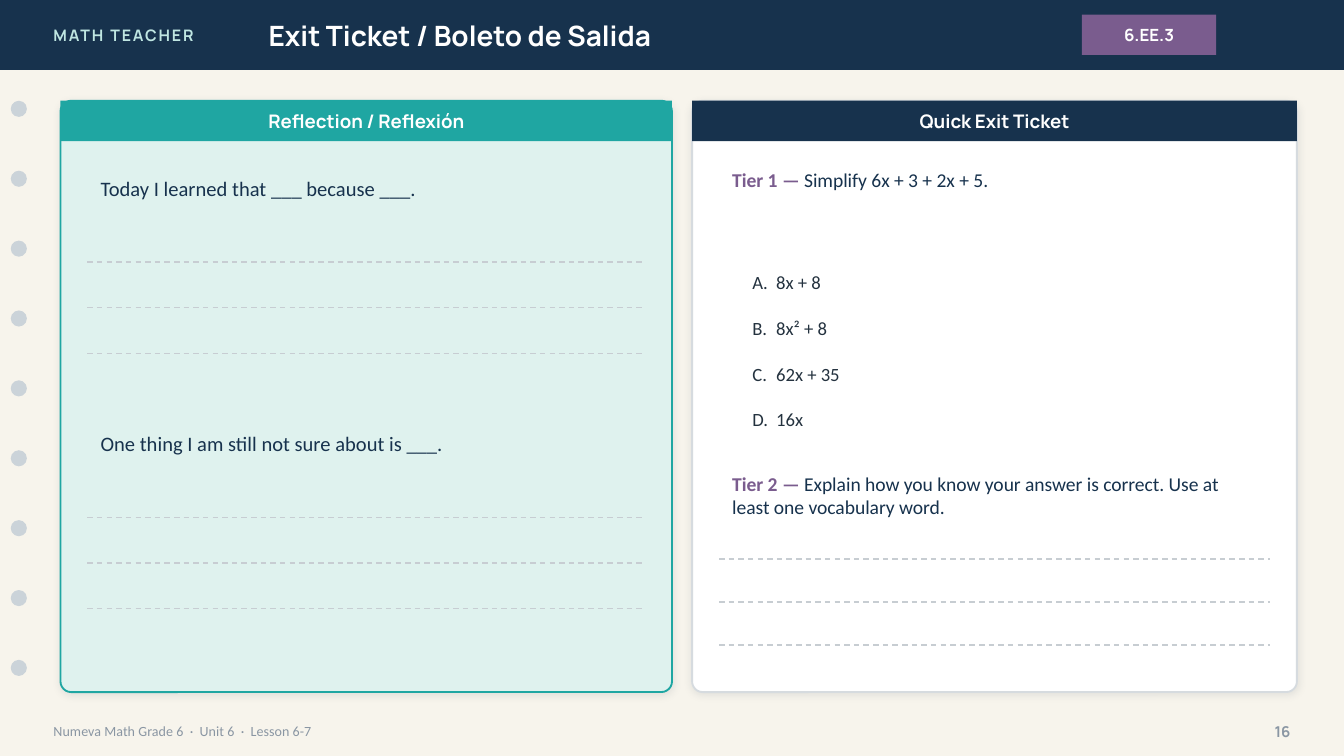
from lxml import etree
from pptx import Presentation
from pptx.dml.color import RGBColor
from pptx.enum.dml import MSO_LINE
from pptx.enum.shapes import MSO_CONNECTOR, MSO_SHAPE
from pptx.enum.text import MSO_ANCHOR, PP_ALIGN
from pptx.oxml import parse_xml
from pptx.oxml.ns import nsdecls, qn
from pptx.util import Pt

COLORS = {
    "paper": "F7F4EC", "navy": "17324D", "mint": "BFE6E2", "white": "FFFFFF",
    "purple": "7A5C8E", "hole": "CBD3D9", "muted": "8A96A3", "teal": "1FA6A2",
    "pale": "DFF2EE", "border": "D6DBDF", "rule": "C7CDD2", "ink": "24323F",
    "shadow": "1C2E42",
}
C = {name: RGBColor.from_string(value) for name, value in COLORS.items()}

prs = Presentation()
prs.slide_width, prs.slide_height = Pt(720), Pt(405)
slide = prs.slides.add_slide(prs.slide_layouts[6])
slide.background.fill.solid()
slide.background.fill.fore_color.rgb = C["paper"]
shapes = slide.shapes


def add_box(kind, x, y, w, h, fill, line=None):
    sp = shapes.add_shape(kind, Pt(x), Pt(y), Pt(w), Pt(h))
    sp.shadow.inherit = False
    sp.fill.solid()
    sp.fill.fore_color.rgb = C[fill]
    if line:
        sp.line.color.rgb = C[line]
        sp.line.width = Pt(1)
    else:
        sp.line.fill.background()
    return sp


def write(sp, text, size, color, font="Calibri", bold=False,
          align=PP_ALIGN.LEFT, anchor=MSO_ANCHOR.MIDDLE, lead=None, tab=None):
    """Fill a shape with one paragraph, after an optional bold purple lead."""
    tf = sp.text_frame
    tf.word_wrap = True
    tf.vertical_anchor = anchor
    p = tf.paragraphs[0]
    p.alignment = align
    if tab:
        tabs = etree.SubElement(p._p.get_or_add_pPr(), qn("a:tabLst"))
        etree.SubElement(tabs, qn("a:tab"), pos=str(Pt(tab)), algn="l")
    p.font.name, p.font.size = font, Pt(size)
    runs = [(text, color, bold)]
    if lead:
        runs.insert(0, (lead, "purple", True))
    else:
        p.font.bold, p.font.color.rgb = bold, C[color]
    for content, run_color, run_bold in runs:
        r = p.add_run()
        r.text = content
        if lead:
            r.font.bold, r.font.color.rgb = run_bold, C[run_color]
    return p


# Header band
add_box(MSO_SHAPE.RECTANGLE, 0, 0, 720, 37.44, "navy")
label = shapes.add_textbox(Pt(21.6), 0, Pt(172.8), Pt(37.44))
p = write(label, "MATH TEACHER", 8.5, "mint", "Manrope", True)
p.runs[0]._r.get_or_add_rPr().set("spc", "100")
title = shapes.add_textbox(Pt(136.8), 0, Pt(403.2), Pt(37.44))
write(title, "Exit Ticket / Boleto de Salida", 15, "white", "Manrope", True)
standard = add_box(MSO_SHAPE.RECTANGLE, 579.6, 7.92, 72, 21.6, "purple")
write(standard, "6.EE.3", 9, "white", "Manrope", True, PP_ALIGN.CENTER)

# Binder holes
for i in range(9):
    add_box(MSO_SHAPE.OVAL, 5.76, 54 + i * 37.44, 8.64, 8.64, "hole")

# Footer, with widened spaces around the separators
footer = shapes.add_textbox(Pt(21.6), Pt(381.6), Pt(504), Pt(20.16))
p = write(footer, "Numeva Math Grade 6", 7.5, "muted")
for part in ("Unit 6", "Lesson 6-7"):
    for content in (" ", "·", " ", part):
        r = p.add_run()
        r.text = content
        if content == " ":
            r._r.get_or_add_rPr().set("spc", "170")
number = shapes.add_textbox(Pt(662.4), Pt(381.6), Pt(36), Pt(20.16))
write(number, "16", 8, "muted", "Manrope", True, PP_ALIGN.RIGHT)

# Two cards with heading bars
for heading, x, w, fill, line, bar in (
    ("Reflection / Reflexión", 32.4, 327.6, "pale", "teal", "teal"),
    ("Quick Exit Ticket", 370.8, 324, "white", "border", "navy"),
):
    card = add_box(MSO_SHAPE.ROUNDED_RECTANGLE, x, 54, w, 316.8, fill, line)
    card.adjustments[0] = 0.018
    effects = card._element.spPr.find(qn("a:effectLst"))
    effects.append(parse_xml(
        f'<a:outerShdw {nsdecls("a")} blurRad="{Pt(4)}" dist="{Pt(1)}" '
        f'dir="5400000" algn="bl" rotWithShape="0">'
        f'<a:srgbClr val="{COLORS["shadow"]}"><a:alpha val="10000"/></a:srgbClr>'
        f'</a:outerShdw>'))
    sp = add_box(MSO_SHAPE.RECTANGLE, x, 54, w, 21.6, bar)
    write(sp, heading, 10, "white", "Manrope", True, PP_ALIGN.CENTER)

# Reflection prompts
for prompt, y in (
    ("Today I learned that ___ because ___.", 86.4),
    ("One thing I am still not sure about is ___.", 223.2),
):
    s = shapes.add_textbox(Pt(46.8), Pt(y), Pt(298.8), Pt(28.8))
    write(s, prompt, 11, "navy")

# Exit ticket questions and choices
for lead, question, y, h in (
    ("Tier 1 — ", "Simplify 6x + 3 + 2x + 5.", 86.4, 50.4),
    ("Tier 2 — ", "Explain how you know your answer is correct. "
     "Use at least one vocabulary word.", 249.12, 39.6),
):
    s = shapes.add_textbox(Pt(385.2), Pt(y), Pt(295.2), Pt(h))
    write(s, question, 10.5, "navy", anchor=MSO_ANCHOR.TOP, lead=lead)
for i, choice in enumerate(("A.\t8x + 8", "B.\t8x² + 8", "C.\t62x + 35", "D.\t16x")):
    s = shapes.add_textbox(Pt(396), Pt(140.4 + i * 24.48), Pt(280.8), Pt(21.6))
    write(s, choice, 10, "ink", tab=12.75)

# Dashed writing lines, three to an answer
for x1, x2, top, gap in (
    (46.8, 345.6, 140.4, 24.48),
    (46.8, 345.6, 277.2, 24.48),
    (385.2, 680.4, 299.52, 23.04),
):
    for i in range(3):
        y = Pt(top + i * gap)
        rule = shapes.add_connector(MSO_CONNECTOR.STRAIGHT, Pt(x1), y, Pt(x2), y)
        rule.line.color.rgb = C["rule"]
        rule.line.width = Pt(0.75)
        rule.line.dash_style = MSO_LINE.DASH
        etree.SubElement(rule._element.spPr, qn("a:effectLst"))

prs.save("out.pptx")
